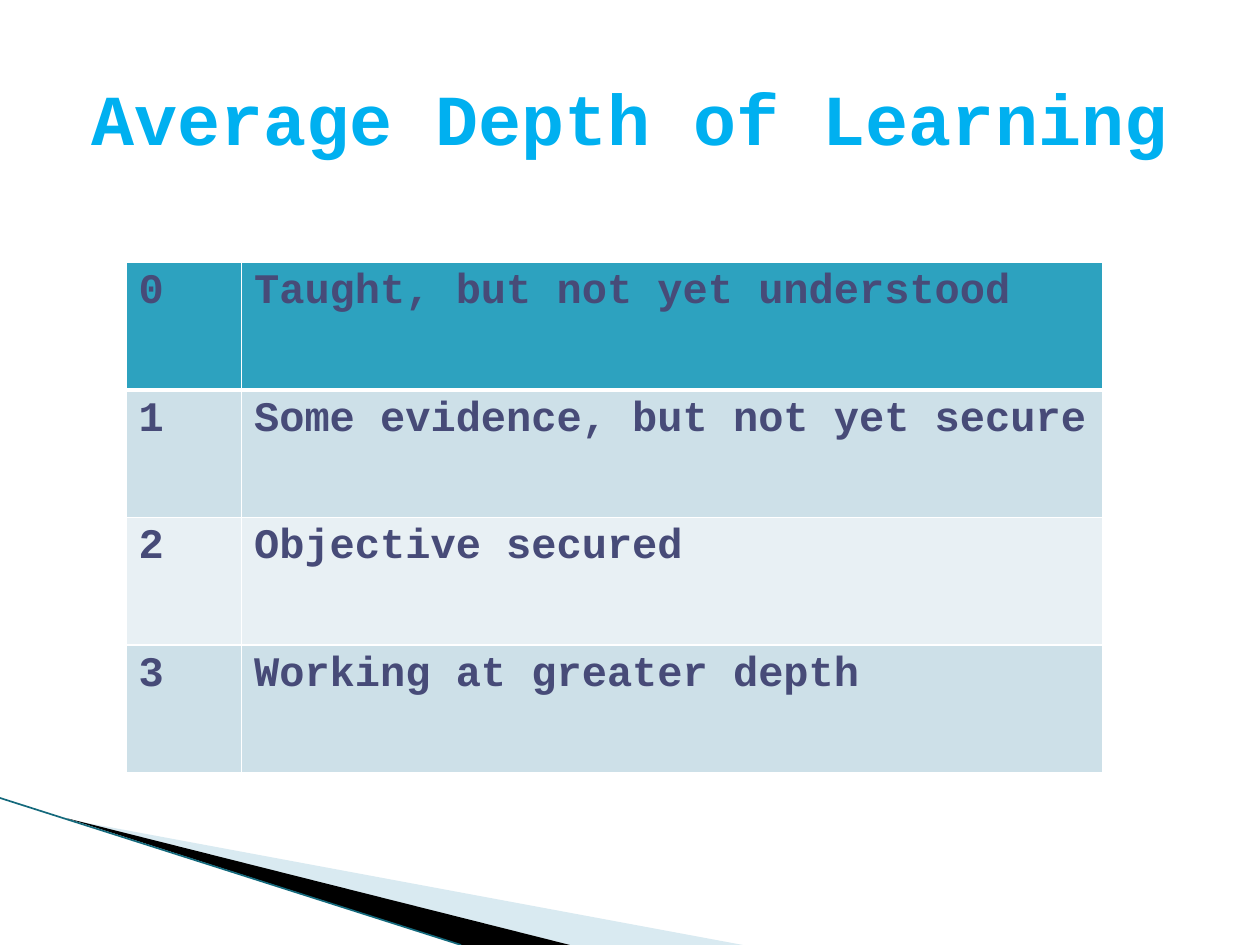
from lxml.etree import SubElement
from pptx import Presentation
from pptx.dml.color import RGBColor
from pptx.enum.shapes import MSO_CONNECTOR
from pptx.enum.text import MSO_ANCHOR, PP_ALIGN
from pptx.oxml.ns import qn
from pptx.util import Pt

COLORS = {
    "title": "00B0F0",
    "text": "474B78",
    "header": "2DA2BF",
    "band_dark": "CDE0E8",
    "band_light": "E8F0F4",
    "border": "FFFFFF",
    "pale_wedge": "A0CBDC",
    "dark_wedge": "000000",
    "edge": "14697C",
}
FONT = "Courier New"
LEVELS = [
    ("0", "Taught, but not yet understood"),
    ("1", "Some evidence, but not yet secure"),
    ("2", "Objective secured"),
    ("3", "Working at greater depth"),
]


def rgb(name):
    return RGBColor.from_string(COLORS[name])


def style(paragraph, size, color):
    font = paragraph.font
    font.name, font.size, font.bold = FONT, Pt(size), True
    font.color.rgb = rgb(color)


def add_wedge(slide, left, top, points, color, opacity=100):
    corners = [(Pt(left + x), Pt(top + y)) for x, y in points]
    builder = slide.shapes.build_freeform(*corners[0])
    builder.add_line_segments(corners[1:], close=True)
    wedge = builder.convert_to_shape()
    wedge.shadow.inherit = False
    wedge.fill.solid()
    wedge.fill.fore_color.rgb = rgb(color)
    wedge.line.fill.background()
    if opacity < 100:
        tint = wedge._element.spPr.find(qn("a:solidFill"))[0]
        SubElement(tint, qn("a:alpha"), val=str(opacity * 1000))


def add_corner_decoration(slide, left, top, width, height):
    # Pale and dark wedges fanning out to the bottom edge
    add_wedge(slide, left, top,
              [(39.6, 12.4), (width, height), (325.7, height)],
              "pale_wedge", opacity=40)
    add_wedge(slide, left, top,
              [(38.2, 11.6), (325.7, height), (263.5, height)], "dark_wedge")
    # Thin edge line
    edge = slide.shapes.add_connector(
        MSO_CONNECTOR.STRAIGHT, Pt(left), Pt(top),
        Pt(left + 263.5), Pt(top + height))
    edge.line.color.rgb = rgb("edge")
    edge.line.width = Pt(0.95)
    SubElement(edge._element.spPr, qn("a:effectLst"))


def add_title(slide, left, top, width, height):
    title = slide.shapes.add_textbox(Pt(left), Pt(top), Pt(width), Pt(height))
    frame = title.text_frame
    frame.word_wrap = True
    frame.vertical_anchor = MSO_ANCHOR.MIDDLE
    heading = frame.paragraphs[0]
    heading.text = "Average Depth of Learning"
    heading.alignment = PP_ALIGN.CENTER
    style(heading, 41, "title")


def set_borders(cell, bottom=1, top=1):
    properties = cell._tc.get_or_add_tcPr()
    widths = {"a:lnL": 1, "a:lnR": 1, "a:lnT": top, "a:lnB": bottom}
    for index, (tag, width) in enumerate(widths.items()):
        border = SubElement(properties, qn(tag), w=str(Pt(width)))
        fill = SubElement(border, qn("a:solidFill"))
        SubElement(fill, qn("a:srgbClr"), val=COLORS["border"])
        properties.insert(index, border)  # borders precede the fill


def add_levels_table(slide, left, top, width, height):
    table = slide.shapes.add_table(
        len(LEVELS), 2, Pt(left), Pt(top), Pt(width), Pt(height)).table
    score_width = 66
    table.columns[0].width = Pt(score_width)
    table.columns[1].width = Pt(width - score_width)
    for row, level in enumerate(LEVELS):
        table.rows[row].height = Pt(height / len(LEVELS))
        band = "header" if row == 0 else ("band_light", "band_dark")[row % 2]
        for column, wording in enumerate(level):
            cell = table.cell(row, column)
            cell.text = wording
            cell.fill.solid()
            cell.fill.fore_color.rgb = rgb(band)
            set_borders(cell, bottom=3 if row == 0 else 1,
                        top=3 if row == 1 else 1)
            style(cell.text_frame.paragraphs[0], 24, "text")


def main():
    deck = Presentation()
    deck.slide_width, deck.slide_height = Pt(720), Pt(540)
    slide = deck.slides.add_slide(deck.slide_layouts[6])
    add_corner_decoration(slide, 0, 456, 424.5, 84)
    add_title(slide, 36, 21.6, 648, 90)
    add_levels_table(slide, 72, 150, 558, 291.6)
    deck.save("out.pptx")


if __name__ == "__main__":
    main()
